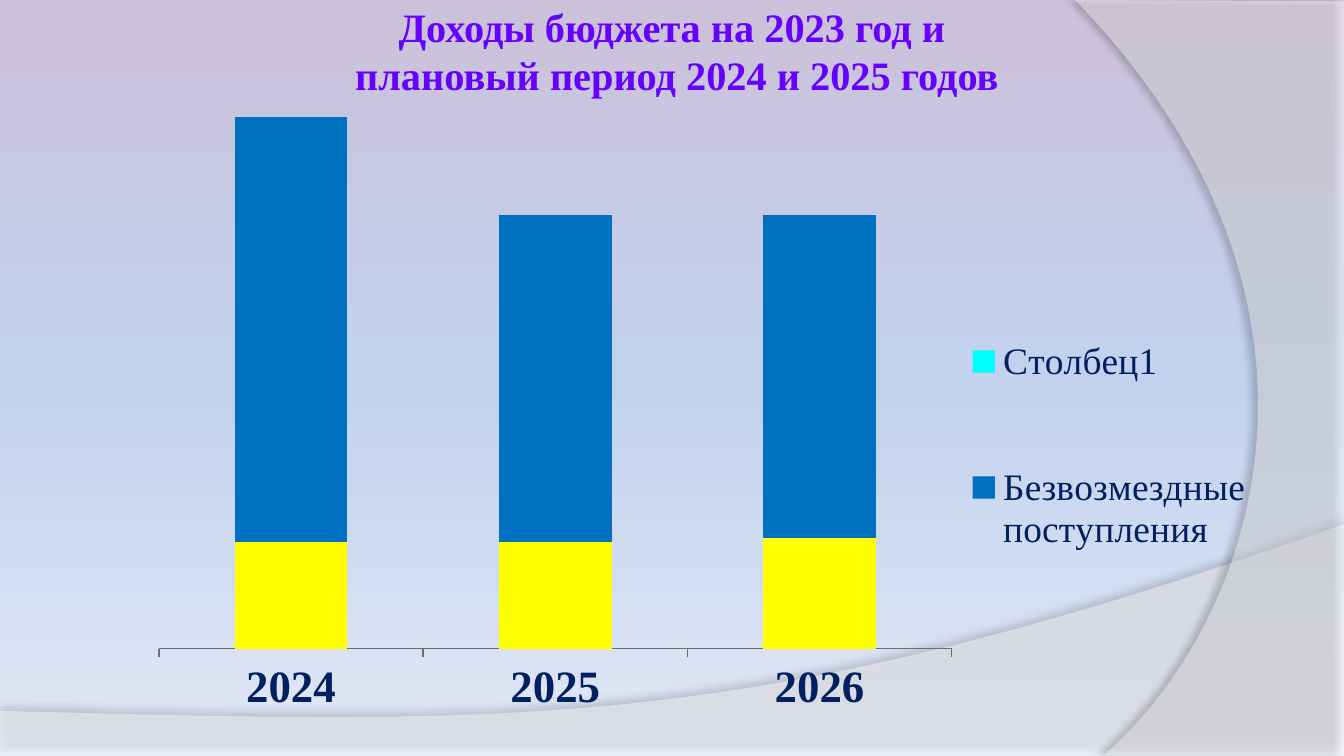
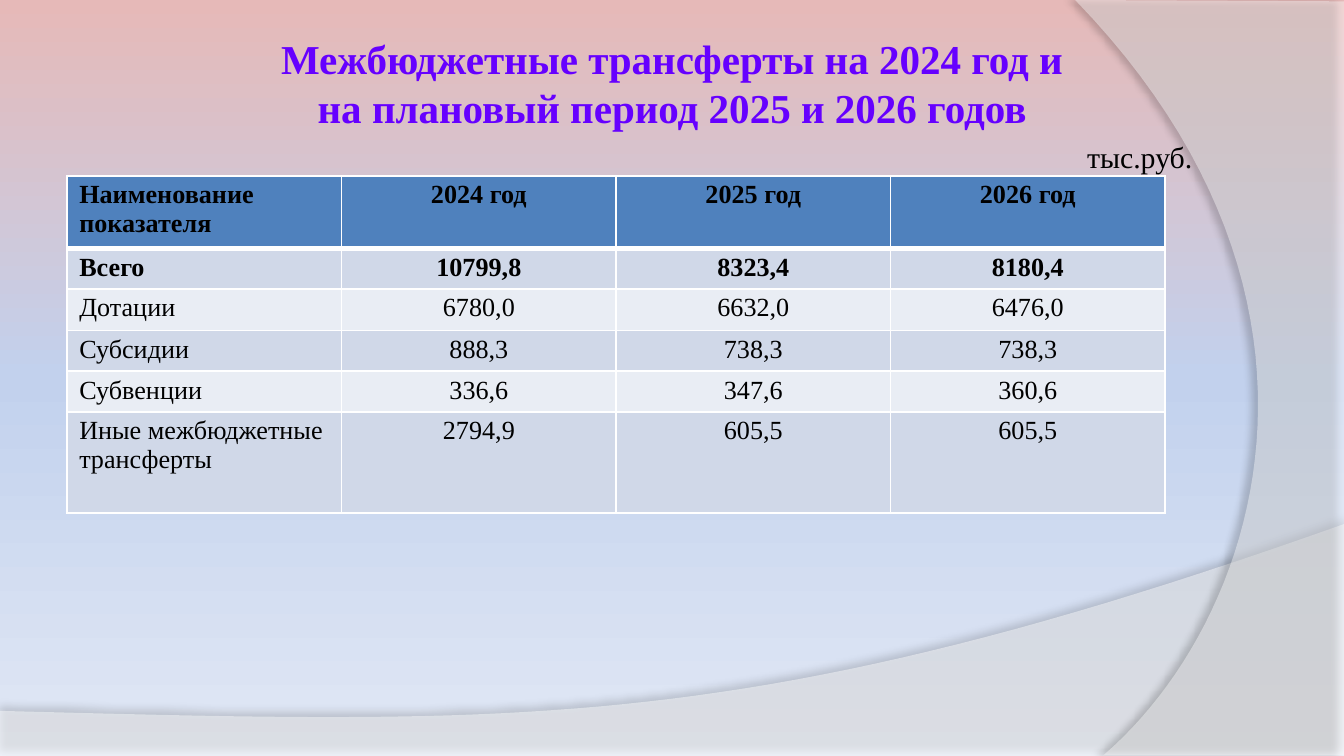
from lxml import etree
from pptx import Presentation
from pptx.chart.data import CategoryChartData
from pptx.dml.color import RGBColor as RGB
from pptx.enum.chart import XL_CHART_TYPE as CT, XL_LEGEND_POSITION as LP, XL_TICK_LABEL_POSITION as TLP, XL_TICK_MARK as TM
from pptx.enum.text import MSO_ANCHOR as ANC, PP_ALIGN as AL
from pptx.oxml import parse_xml
from pptx.oxml.ns import nsdecls, qn
from pptx.util import Inches, Pt

C = {"title": "6600FF", "black": "000000", "white": "FFFFFF", "navy": "002060",
     "own": "FFFF00", "grants": "0070C0", "extra": "00FFFF", "axis": "6E6E6E",
     "head": "4F81BD", "dark": "D0D8E8", "light": "E9EDF4",
     "lilac": "CCC1DA", "rose": "E6B9B8", "mid": "C2D1ED", "pale": "E1E8F5"}
SERIF = "Times New Roman"


def style(font, size, color, bold=False):
    for name, value in {"name": SERIF, "size": Pt(size), "bold": bold}.items():
        setattr(font, name, value)
    font.color.rgb = RGB.from_string(C[color])


def add_text(s, box, text, size, color, bold=False, align=AL.LEFT, **frame):
    tf = s.shapes.add_textbox(*map(Inches, box)).text_frame
    tf.word_wrap = True
    for name, value in frame.items():
        setattr(tf, name, value)
    p = tf.paragraphs[0]
    p.text, p.alignment = text, align
    for r in p.runs:
        style(r.font, size, color, bold)


prs = Presentation()
prs.slide_width = Inches(10)
prs.slide_height = prs.slide_width * 9 // 16
blank = prs.slide_layouts[6]
income, transfers = [prs.slides.add_slide(blank) for _ in range(2)]

# Gradient backgrounds
for s, top in ((income, "lilac"), (transfers, "rose")):
    fill = s.background.fill
    fill.gradient()
    fill.gradient_angle = 270
    stops = s._element.find(".//" + qn("a:gsLst"))
    for stop in list(stops):
        stops.remove(stop)
    for pos, color in ((0, top), (50, "mid"), (100, "pale")):
        gs = etree.SubElement(stops, qn("a:gs"), pos=str(pos * 1000))
        etree.SubElement(gs, qn("a:srgbClr"), val=C[color])

# Translucent curved bands, shared through the layout:
# straight corners, then a Bezier curve from the last corner
# opacity %, shadow opacity %, shadow distance pt, shadow direction
bands = [
    ([(0, 5.29), (0, 5.63), (10, 5.63), (10, 3.9)],
     [(5.59, 5.47), (3.91, 5.39), (0, 5.29)], 45, 35, 3.5, 270),
    ([(10, 0.01), (10, 5.62), (8.21, 5.62)],
     [(9.35, 4.64), (10.18, 2.25), (8, 0)], 40, 45, 4, 180),
]
STEPS = 48
for corners, curve, opacity, shade, dist, angle in bands:
    points = list(corners)
    ctrl = [corners[-1]] + curve
    for i in range(1, STEPS + 1):
        t = i / STEPS
        weights = ((1 - t) ** 3, 3 * t * (1 - t) ** 2, 3 * t * t * (1 - t), t ** 3)
        points.append(tuple(sum(w * c[k] for w, c in zip(weights, ctrl)) for k in (0, 1)))
    points = [(Inches(x), Inches(y)) for x, y in points]
    fb = income.shapes.build_freeform(*points[0])
    fb.add_line_segments(points[1:], close=True)
    sp = fb.convert_to_shape()
    sp.fill.solid()
    sp.fill.fore_color.rgb = RGB.from_string(C["white"])
    sp.line.fill.background()
    sp.shadow.inherit = False
    clr = sp._element.spPr.find(qn("a:solidFill"))[0]
    etree.SubElement(clr, qn("a:alpha"), val=str(opacity * 1000))
    effects = sp._element.spPr.find(qn("a:effectLst"))
    shadow = etree.SubElement(effects, qn("a:outerShdw"), blurRad=str(Pt(4)),
                              dist=str(Pt(dist)), dir=str(angle * 60000), rotWithShape="0")
    clr = etree.SubElement(shadow, qn("a:srgbClr"), val=C["black"])
    etree.SubElement(clr, qn("a:alpha"), val=str(shade * 1000))
    blank.shapes._spTree.append(sp._element)

# Titles
for s, height, size, bottom, text in (
        (income, 0.65, 21.6, 0.41, "Доходы бюджета на 2023 год и\v плановый период 2024 и 2025 годов"),
        (transfers, 0.77, 22, 0.05, "Межбюджетные трансферты на 2024 год и\vна плановый период 2025 и 2026 годов")):
    add_text(s, (0.5, 0.23, 9, height), text, size, "title", True, AL.CENTER,
             vertical_anchor=ANC.MIDDLE, margin_left=Inches(0.05), margin_right=Inches(0.05),
             margin_top=Inches(0.05), margin_bottom=Inches(bottom))

# Slide 1: stacked income chart
data = CategoryChartData()
data.categories = ["2024", "2025", "2026"]
data.add_series("Series 1", (2700, 2700, 2800))
data.add_series("Безвозмездные поступления", (10800, 8300, 8200))
data.add_series("Столбец1", (None, None, None))
box = map(Inches, (0.78, 0.62, 8.74, 4.77))
chart = income.shapes.add_chart(CT.COLUMN_STACKED, *box, data).chart
chart.has_title = False
chart.font.name, chart.font.size = "Arial", Pt(9.7)
chart.font.color.rgb = RGB.from_string(C["black"])

plot = chart.plots[0]
plot.gap_width, plot.overlap, plot.vary_by_categories = 134, 100, False
for ser, color in zip(plot.series, ("own", "grants", "extra")):
    ser.format.fill.solid()
    ser.format.fill.fore_color.rgb = RGB.from_string(C[color])
labels = plot.series[2].data_labels
labels.show_value = True
labels.font.color.rgb = RGB.from_string(C["white"])

cat, val = chart.category_axis, chart.value_axis
cat.major_tick_mark, cat.tick_label_position = TM.OUTSIDE, TLP.LOW
cat.format.line.color.rgb = RGB.from_string(C["axis"])
style(cat.tick_labels.font, 24, "navy", True)
val.visible = val.has_major_gridlines = False
val.minimum_scale, val.maximum_scale = 0, 13600
val.tick_labels.number_format, val.tick_labels.number_format_is_linked = "0.0", False

chart.has_legend = True
legend = chart.legend
legend.position, legend.include_in_layout = LP.RIGHT, False
style(legend.font, 20, "navy")
legend_pos = legend._element.find(qn("c:legendPos"))
hidden = parse_xml(f'<c:legendEntry {nsdecls("c")}><c:idx val="0"/><c:delete val="1"/></c:legendEntry>')
legend_pos.addnext(hidden)

# Fixed places of the plot and the legend
area = chart._chartSpace.find(".//" + qn("c:plotArea"))
for parent, after, inner, frame in ((area, None, True, (0.046, 0.046, 0.675, 0.836)),
                                    (legend._element, hidden, False, (0.73, 0.27, 0.25, 0.59))):
    for old in parent.findall(qn("c:layout")):
        parent.remove(old)
    layout = etree.Element(qn("c:layout"))
    manual = etree.SubElement(layout, qn("c:manualLayout"))
    if inner:
        etree.SubElement(manual, qn("c:layoutTarget"), val="inner")
    for tag in ("xMode", "yMode"):
        etree.SubElement(manual, qn("c:" + tag), val="edge")
    for tag, value in zip("xywh", frame):
        etree.SubElement(manual, qn("c:" + tag), val=str(value))
    if after is None:
        parent.insert(0, layout)
    else:
        after.addnext(layout)

# Slide 2: transfers table
rows = [
    ("Наименование показателя", "2024 год", "2025 год", "2026 год"),
    ("Всего", "10799,8", "8323,4", "8180,4"),
    ("Дотации", "6780,0", "6632,0", "6476,0"),
    ("Субсидии", "888,3", "738,3", "738,3"),
    ("Субвенции", "336,6", "347,6", "360,6"),
    ("Иные межбюджетные трансферты", "2794,9", "605,5", "605,5"),
]
box = map(Inches, (0.5, 1.31, 8.17, 2.53))
table = transfers.shapes.add_table(len(rows), 4, *box).table
for row, height in zip(table.rows, (0.51, 0.3, 0.31, 0.3, 0.3, 0.75)):
    row.height = Inches(height)
for i, row in enumerate(rows):
    fill = "head" if i == 0 else "dark" if i % 2 else "light"
    for j, text in enumerate(row):
        cell = table.cell(i, j)
        cell.margin_left = cell.margin_right = Inches(0.09)
        cell.margin_top = cell.margin_bottom = Pt(2.5)
        cell.fill.solid()
        cell.fill.fore_color.rgb = RGB.from_string(C[fill])
        p = cell.text_frame.paragraphs[0]
        p.alignment = AL.CENTER if j else AL.LEFT
        r = p.add_run()
        r.text = text
        style(r.font, 14, "black", i < 2)
        # White borders, thick under the header
        for k, side in enumerate("LRTB"):
            width = 3 if (i, side) in ((0, "B"), (1, "T")) else 1
            ln = etree.Element(qn("a:ln" + side), w=str(Pt(width)))
            line_fill = etree.SubElement(ln, qn("a:solidFill"))
            etree.SubElement(line_fill, qn("a:srgbClr"), val=C["white"])
            cell._tc.tcPr.insert(k, ln)

# Unit of measure
add_text(transfers, (7.99, 0.98, 1.42, 0.37), "тыс.руб.", 16, "black")

prs.save("out.pptx")
